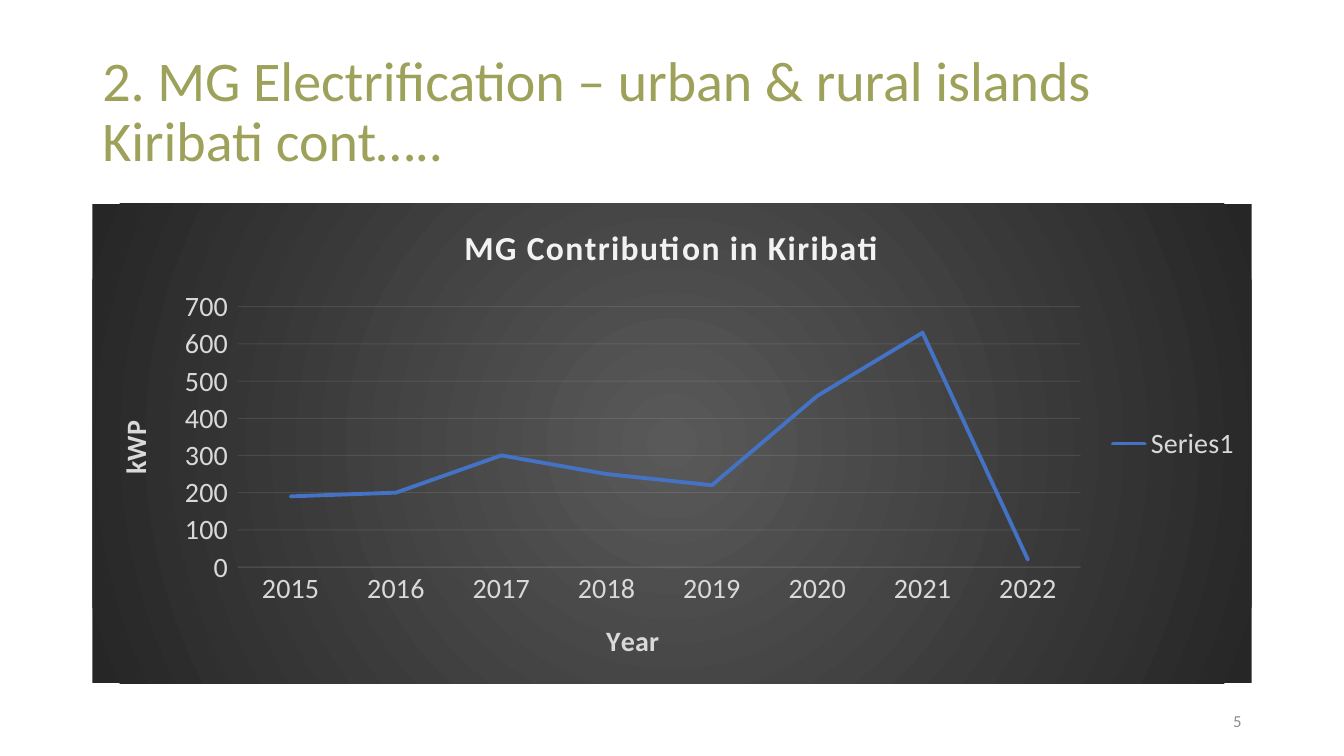
from dataclasses import dataclass

import lxml.etree
import pptx
import pptx.chart.data
import pptx.dml.color
import pptx.enum.chart
import pptx.enum.text
import pptx.oxml
import pptx.oxml.ns
import pptx.util

Pt = pptx.util.Pt
RGBColor = pptx.dml.color.RGBColor
qn = pptx.oxml.ns.qn

FONT = "Calibri"
OLIVE = RGBColor(0x9E, 0xA1, 0x59)
GREY = RGBColor(0x8C, 0x8C, 0x8C)
PALE = RGBColor(0xF2, 0xF2, 0xF2)
LABEL = RGBColor(0xD9, 0xD9, 0xD9)
BLUE = RGBColor(0x44, 0x72, 0xC4)
DARK_CENTRE = RGBColor(0x59, 0x59, 0x59)
DARK_EDGE = RGBColor(0x26, 0x26, 0x26)

CAPACITY_KWP = {
    "2015": 190, "2016": 200, "2017": 300, "2018": 250,
    "2019": 220, "2020": 460, "2021": 630, "2022": 20,
}


@dataclass
class Caption:
    text: str
    left: float
    top: float
    width: float
    height: float
    size: float
    color: RGBColor
    align: pptx.enum.text.PP_ALIGN
    line_spacing: float = 1.0


CAPTIONS = [
    Caption("2. MG Electrification – urban & rural islands Kiribati cont…..",
            66, 28.75, 828, 104.4, 40, OLIVE, pptx.enum.text.PP_ALIGN.LEFT, 0.9),
    Caption("5", 678, 500.5, 216, 28.75, 12, GREY, pptx.enum.text.PP_ALIGN.RIGHT),
]


def style_font(font, size: float, color: RGBColor, bold: bool = False) -> None:
    font.name = FONT
    font.size = Pt(size)
    font.bold = bold
    font.color.rgb = color


def add_caption(slide, caption: Caption) -> None:
    box = slide.shapes.add_textbox(
        Pt(caption.left), Pt(caption.top), Pt(caption.width), Pt(caption.height))
    frame = box.text_frame
    frame.word_wrap = True
    frame.vertical_anchor = pptx.enum.text.MSO_ANCHOR.MIDDLE
    frame.text = caption.text
    paragraph = frame.paragraphs[0]
    paragraph.alignment = caption.align
    paragraph.line_spacing = caption.line_spacing
    style_font(paragraph.runs[0].font, caption.size, caption.color)


def set_heading(title, text: str, size: float, color: RGBColor,
                spacing: int = 0, rotation: int = 0) -> None:
    """Fill a chart or axis title; spacing in 1/100 pt, rotation in degrees."""
    frame = title.text_frame
    frame.text = text
    run = frame.paragraphs[0].runs[0]
    style_font(run.font, size, color, bold=True)
    run._r.get_or_add_rPr().set("spc", str(spacing))
    frame._txBody.find(qn("a:bodyPr")).set("rot", str(rotation * 60000))


def draw_faint_line(line) -> None:
    """Thin pale line at 10 % opacity."""
    line.width = Pt(0.75)
    line.color.rgb = PALE
    for color in line._get_or_add_ln().iter(qn("a:srgbClr")):
        lxml.etree.SubElement(color, qn("a:alpha")).set("val", "10000")


def fill_background(chart) -> None:
    """Radial gradient from the centre of the chart to its edge."""
    chart._chartSpace.find(qn("c:chart")).addnext(pptx.oxml.parse_xml(
        f'<c:spPr {pptx.oxml.ns.nsdecls("c", "a")}><a:gradFill><a:gsLst>'
        f'<a:gs pos="0"><a:srgbClr val="{DARK_CENTRE}"/></a:gs>'
        f'<a:gs pos="100000"><a:srgbClr val="{DARK_EDGE}"/></a:gs></a:gsLst>'
        '<a:path path="circle"><a:fillToRect l="50000" t="50000" r="50000" '
        'b="50000"/></a:path></a:gradFill><a:ln><a:noFill/></a:ln></c:spPr>'))


def add_contribution_chart(slide) -> None:
    data = pptx.chart.data.CategoryChartData()
    data.categories = list(CAPACITY_KWP)
    data.add_series("Series1", list(CAPACITY_KWP.values()))
    chart = slide.shapes.add_chart(
        pptx.enum.chart.XL_CHART_TYPE.LINE,
        Pt(66), Pt(145.5), Pt(828), Pt(342.75), data).chart
    fill_background(chart)
    style_font(chart.font, 20, LABEL)
    set_heading(chart.chart_title, "MG Contribution in Kiribati", 24, PALE, spacing=100)

    years, capacity = chart.category_axis, chart.value_axis
    set_heading(years.axis_title, "Year", 20, LABEL)
    set_heading(capacity.axis_title, "kWP", 20, LABEL, rotation=-90)
    for axis in (years, capacity):
        style_font(axis.tick_labels.font, 20, LABEL)
    years.major_tick_mark = pptx.enum.chart.XL_TICK_MARK.NONE
    capacity.major_tick_mark = pptx.enum.chart.XL_TICK_MARK.OUTSIDE
    draw_faint_line(years.format.line)
    capacity.minimum_scale, capacity.maximum_scale = 0, 700
    capacity.major_unit = 100
    capacity.format.line.fill.background()
    draw_faint_line(capacity.major_gridlines.format.line)

    chart.has_legend = True
    chart.legend.position = pptx.enum.chart.XL_LEGEND_POSITION.RIGHT
    chart.legend.include_in_layout = False
    style_font(chart.legend.font, 20, LABEL)

    chart.plots[0].vary_by_categories = False
    contribution = chart.plots[0].series[0]
    contribution.smooth = False
    contribution.marker.style = pptx.enum.chart.XL_MARKER_STYLE.NONE
    contribution.format.line.width = Pt(2.75)
    contribution.format.line.color.rgb = BLUE
    contribution.format.line._get_or_add_ln().set("cap", "rnd")


def main() -> None:
    deck = pptx.Presentation()
    deck.slide_width, deck.slide_height = Pt(960), Pt(540)
    slide = deck.slides.add_slide(deck.slide_layouts[6])
    for caption in CAPTIONS:
        add_caption(slide, caption)
    add_contribution_chart(slide)
    deck.save("out.pptx")


if __name__ == "__main__":
    main()
